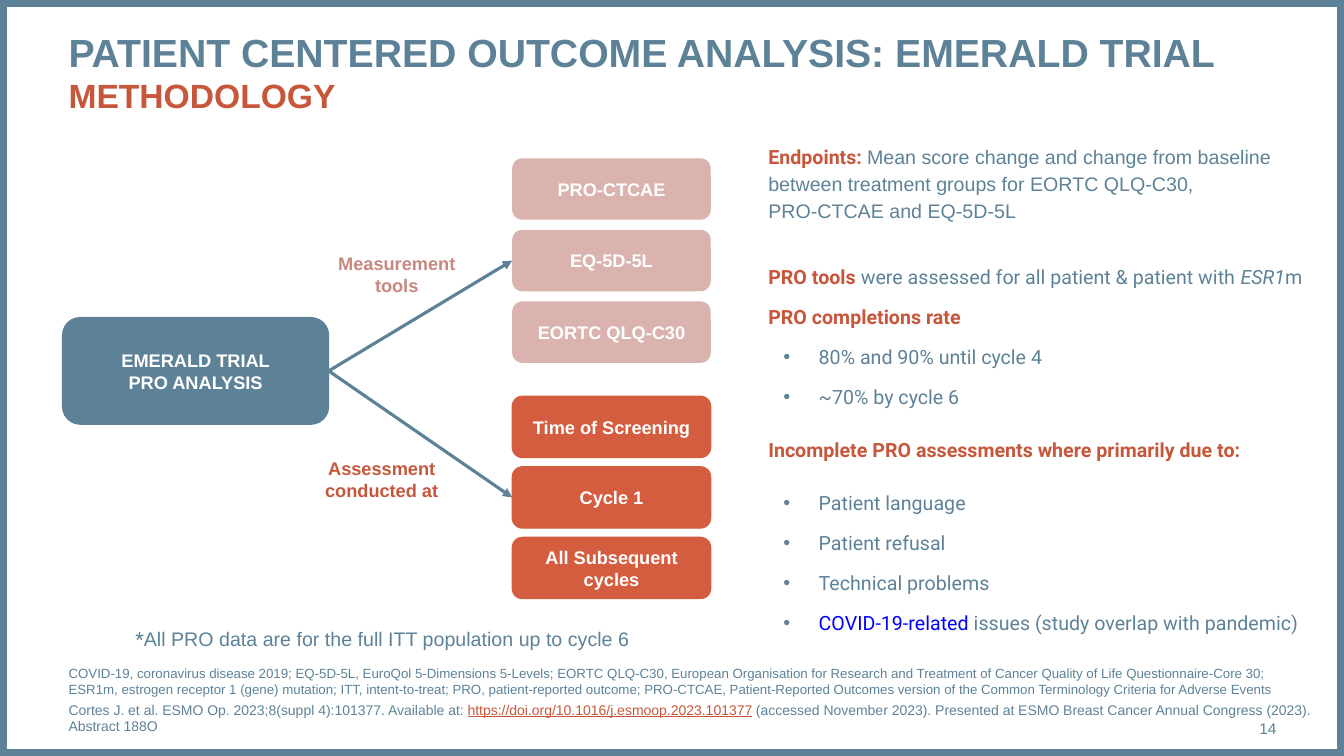
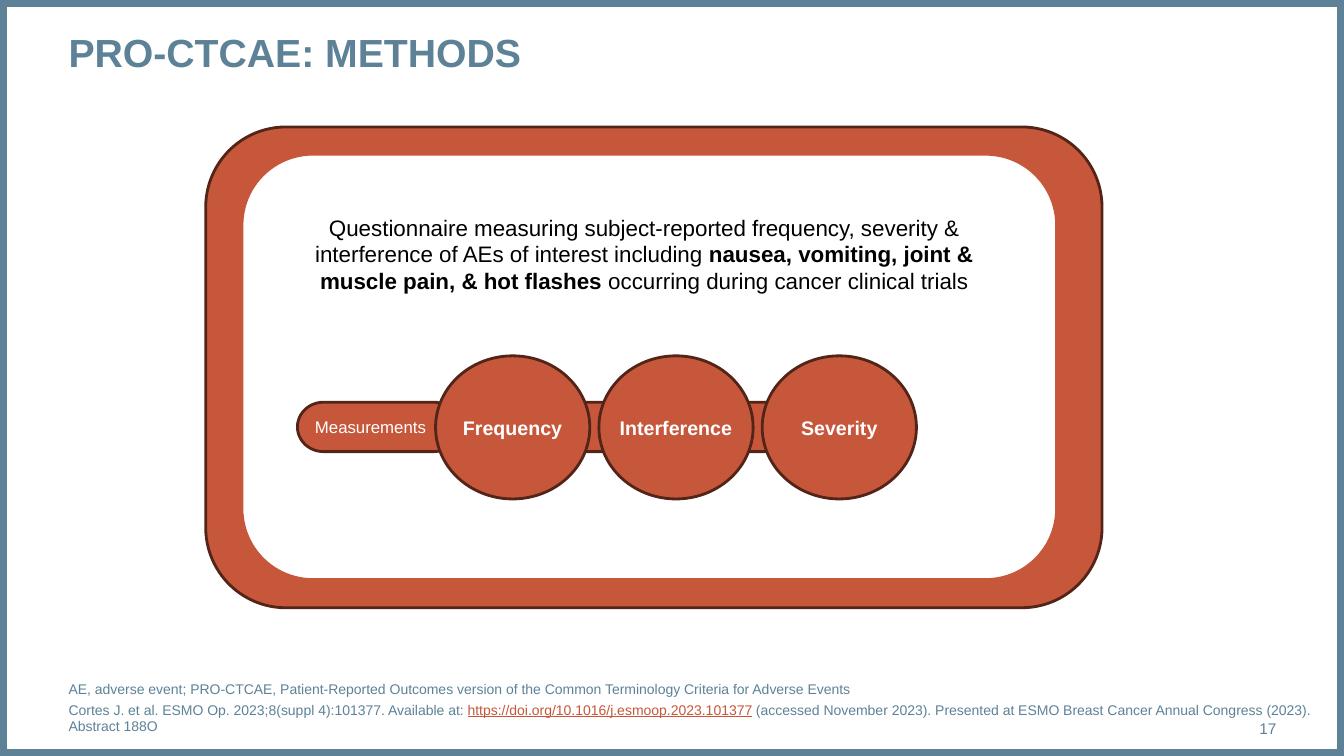
import pptx
import pptx.util
import pptx.dml.color
import pptx.enum.shapes
import pptx.enum.text
import pptx.oxml.ns
import lxml.etree

PX = 9144  # EMU in one px (100 px to the inch)
WIDE, HIGH = 1333, 750
BLUE, RUST, BRICK = "5D8298", "C6573B", "D45D3F"
PINK, ROSE, BROWN = "DBB3AE", "C78880", "532418"
WHITE, BLACK, LINK = "FFFFFF", "000000", "0000FF"

KIND = pptx.enum.shapes.MSO_SHAPE
ALIGN = pptx.enum.text.PP_ALIGN
ANCHOR = pptx.enum.text.MSO_ANCHOR
LEFT, MID, RIGHT = ALIGN.LEFT, ALIGN.CENTER, ALIGN.RIGHT
QN = pptx.oxml.ns.qn


def px(*nums):
    return [pptx.util.Emu(n * PX) for n in nums]


def tint(target, hex6):
    """Colour a fill, or a font or line through its colour."""
    if hasattr(target, "solid"):
        target.solid()
        target = target.fore_color
    target.rgb = pptx.dml.color.RGBColor.from_string(hex6)


def node(parent, tag, **attrs):
    return lxml.etree.SubElement(parent, QN(tag), attrs)


def setup(shape, anchor=ANCHOR.TOP, pad=(10, 10), wrap=True):
    """Prepare a text frame; pad is (side, top) in px."""
    frame = shape.text_frame
    frame.word_wrap = wrap
    frame.auto_size = pptx.enum.text.MSO_AUTO_SIZE.NONE
    frame.vertical_anchor = anchor
    frame.margin_left = frame.margin_right = px(pad[0])[0]
    frame.margin_top = frame.margin_bottom = px(pad[1])[0]
    return frame


def write(frame, runs, align=LEFT, lead=1.0, above=0, below=0, dot=None, **font):
    """Add one paragraph; runs is a text or a list of (text, format)."""
    first = frame.paragraphs[0]
    para = frame.add_paragraph() if first.runs else first
    para.alignment, para.line_spacing = align, lead
    para.space_before = pptx.util.Pt(above)
    para.space_after = pptx.util.Pt(below)
    props = para._p.get_or_add_pPr()
    left, hang = px(50, -35) if dot else (0, 0)
    props.set("marL", str(left))
    props.set("indent", str(hang))
    if dot:
        node(node(props, "a:buClr"), "a:srgbClr", val=BLUE)
        node(props, "a:buFont", typeface="Arial")
        node(props, "a:buChar", char=dot)
    else:
        node(props, "a:buNone")
    for text, own in [(runs, {})] if isinstance(runs, str) else runs:
        look = {"size": 13, "face": "Arial", "color": BLUE, **font, **own}
        run = para.add_run()
        run.text = text
        run.font.size = pptx.util.Pt(look["size"])
        run.font.name = look["face"]
        run.font.bold = look.get("bold", False)
        run.font.italic = look.get("slant", False)
        run.font.underline = look.get("under", False)
        tint(run.font.color, look["color"])


def block(slide, kind, box, fill=None, line=None, width=0.75):
    shape = slide.shapes.add_shape(kind, *px(*box))
    shape.shadow.inherit = False
    if fill:
        tint(shape.fill, fill)
    else:
        shape.fill.background()
    if line:
        tint(shape.line.color, line)
        shape.line.width = pptx.util.Pt(width)
    else:
        shape.line.fill.background()
    return shape


def card(slide, box, lines, fill, line=None):
    """Rounded box with bold white text."""
    shape = block(slide, KIND.ROUNDED_RECTANGLE, box, fill, line)
    frame = setup(shape, ANCHOR.MIDDLE)
    for text in lines:
        write(frame, text, align=MID, color=WHITE, bold=True)
    return shape


def label(slide, box, lines, pad=(10, 10), anchor=ANCHOR.TOP, **form):
    frame = setup(slide.shapes.add_textbox(*px(*box)), anchor, pad)
    for text in lines:
        write(frame, text, **form)


def arrow(slide, start, end):
    """Join the right side of one box to the left side of another."""
    line = slide.shapes.add_connector(
        pptx.enum.shapes.MSO_CONNECTOR.STRAIGHT, 0, 0, 0, 0)
    line.begin_connect(start, 3)
    line.end_connect(end, 1)
    tint(line.line.color, BLUE)
    line.line.width = pptx.util.Pt(2.25)
    props = line.element.spPr
    node(props.find(QN("a:ln")), "a:tailEnd", type="triangle")
    node(props, "a:effectLst")


def place(holder, box, anchor=ANCHOR.TOP):
    holder.left, holder.top, holder.width, holder.height = px(*box)
    return setup(holder, anchor, (0, 0))


# Parts shared by all slides
def border(deck, slide):
    """Draw the border once and hand it to the slide master."""
    shape = block(slide, KIND.RECTANGLE, (0, 0, WIDE, HIGH), None, BLUE, 10)
    shape.element.nvSpPr.cNvPr.set("id", "99")
    deck.slide_master.shapes.element.insert(2, shape.element)


def head(slide, title, sub=None):
    frame = place(slide.shapes.title, (68, 28, 1199, 94))
    write(frame, title, size=28, bold=True)
    if sub:
        write(frame, sub, size=24, color=RUST, bold=True)


def foot(slide, holder, terms, number, size=10):
    frame = place(holder, (68, 655, 1235, 74), ANCHOR.BOTTOM)
    write(frame, terms, above=3, size=size)
    write(frame, [
        ("Cortes J. et al. ESMO Op. 2023;8(suppl 4):101377. Available at: ", {}),
        ("https://doi.org/10.1016/j.esmoop.2023.101377",
         {"color": RUST, "under": True}),
        (" (accessed November 2023). Presented at ESMO Breast Cancer Annual "
         "Congress (2023). Abstract 188O", {}),
    ], above=3, size=10)
    label(slide, (1181, 703, 85, 40), [number], (0, 0), ANCHOR.MIDDLE,
          align=RIGHT, size=11)


# Slide 1: flow and findings
def stack(slide, box, step, names, fill, line=None):
    x, y, w, h = box
    return [card(slide, (x, y + i * step, w, h), [name], fill, line)
            for i, name in enumerate(names)]


def flow(slide, x, y):
    root = card(slide, (x, y + 158, 264, 106),
                ["EMERALD TRIAL", "PRO ANALYSIS"], BLUE, BLUE)
    tools = stack(slide, (x + 446, y, 197, 61), 71,
                  ["PRO-CTCAE", "EQ-5D-5L", "EORTC QLQ-C30"], PINK)
    times = stack(slide, (x + 446, y + 236, 197, 61), 70,
                  ["Time of Screening", "Cycle 1", "All Subsequent cycles"],
                  BRICK, BRICK)
    for group in (tools, times):
        arrow(slide, root, group[1])
    label(slide, (x + 243, y + 83, 177, 64), ["Measurement", "tools"],
          align=MID, color=ROSE, bold=True)
    label(slide, (x + 228, y + 287, 177, 64), ["Assessment conducted at"],
          align=MID, color=RUST, bold=True)
    label(slide, (x + 15, y + 439, 605, 73), [[
        ("*", {"face": "Roboto"}),
        ("All PRO data are for the full ITT population up to cycle 6", {}),
    ]], align=MID, lead=1.7, below=9, size=14)


def facts(holder, box):
    frame = place(holder, box)
    key = {"color": RUST, "bold": True}
    base = {"size": 14, "face": "Roboto", "lead": 1.7}
    write(frame, [
        ("Endpoints: ", key),
        ("Mean score change and change from baseline between treatment groups "
         "for EORTC QLQ-C30, PRO‑CTCAE and EQ-5D-5L", {"face": "Arial"}),
    ], **{**base, "lead": 1.15})
    write(frame, [
        ("PRO tools ", key),
        ("were assessed for all patient & patient with ", {}),
        ("ESR1", {"slant": True}),
        ("m", {}),
    ], above=19, **base)
    write(frame, "PRO completions rate", **base, **key)
    for text in ("80% and 90% until cycle 4", "~70% by cycle 6"):
        write(frame, text, dot="•", **base)
    write(frame, "Incomplete PRO assessments where primarily due to:",
          above=9, **base, **key)
    causes = ["Patient language", "Patient refusal", "Technical problems",
              [("COVID-19-related", {"color": LINK}),
               (" issues (study overlap with pandemic)", {})]]
    for i, cause in enumerate(causes):
        write(frame, cause, dot="•", above=0 if i else 9, **base)


def method(deck):
    slide = deck.slides.add_slide(deck.slide_layouts[3])
    border(deck, slide)
    head(slide, "PATIENT CENTERED OUTCOME ANALYSIS: EMERALD TRIAL", "METHODOLOGY")
    flow(slide, 62, 157)
    facts(slide.placeholders[1], (762, 140, 534, 486))
    foot(slide, slide.placeholders[2],
         "COVID-19, coronavirus disease 2019; EQ-5D-5L, EuroQol 5-Dimensions "
         "5-Levels; EORTC QLQ-C30, European Organisation for Research and "
         "Treatment of Cancer Quality of Life Questionnaire-Core 30; ESR1m, "
         "estrogen receptor 1 (gene) mutation; ITT, intent-to-treat; PRO, "
         "patient-reported outcome; PRO-CTCAE, Patient-Reported Outcomes "
         "version of the Common Terminology Criteria for Adverse Events",
         "14", 9.5)


# Slide 2: framed panel with a chain of measures
def chain(slide, x, y, names):
    step, first = 162, 137
    link = KIND.FLOWCHART_TERMINATOR
    starts = [x + first + i * step for i in range(len(names))]
    for left in [x] + [start + 64 for start in starts[:-1]]:
        bar = block(slide, link, (left, y + 46, 161, 49), RUST, BROWN, 2)
        if left == x:
            write(setup(bar, ANCHOR.MIDDLE, (10, 5)), "Measurements",
                  size=12, color=WHITE)
    for left, name in zip(starts, names):
        disc = block(slide, KIND.OVAL, (left, y, 153, 142), RUST, BROWN, 2)
        write(setup(disc, ANCHOR.MIDDLE, (0, 0), False), name,
              align=MID, size=14, color=WHITE, bold=True)


def panel(slide, x, y):
    block(slide, KIND.ROUNDED_RECTANGLE, (x, y, 889, 477), RUST, BROWN, 2)
    block(slide, KIND.ROUNDED_RECTANGLE, (x + 36, y + 27, 808, 422),
          WHITE, RUST, 2)
    label(slide, (x + 60, y + 81, 750, 91), [[
        ("Questionnaire measuring subject-reported frequency, severity & "
         "interference of AEs of interest including ", {}),
        ("nausea, vomiting, joint & muscle pain, & hot flashes", {"bold": True}),
        (" occurring during cancer clinical trials", {}),
    ]], (10, 5), align=MID, size=16, color=BLACK)
    chain(slide, x + 91, y + 227, ["Frequency", "Interference", "Severity"])


def survey(deck):
    slide = deck.slides.add_slide(deck.slide_layouts[1])
    head(slide, "PRO-CTCAE: METHODS")
    panel(slide, 204, 126)
    foot(slide, slide.placeholders[1],
         "AE, adverse event; PRO-CTCAE, Patient-Reported Outcomes version of "
         "the Common Terminology Criteria for Adverse Events", "17")


def main():
    deck = pptx.Presentation()
    deck.slide_width, deck.slide_height = px(WIDE, HIGH)
    method(deck)
    survey(deck)
    deck.save("out.pptx")


if __name__ == "__main__":
    main()
